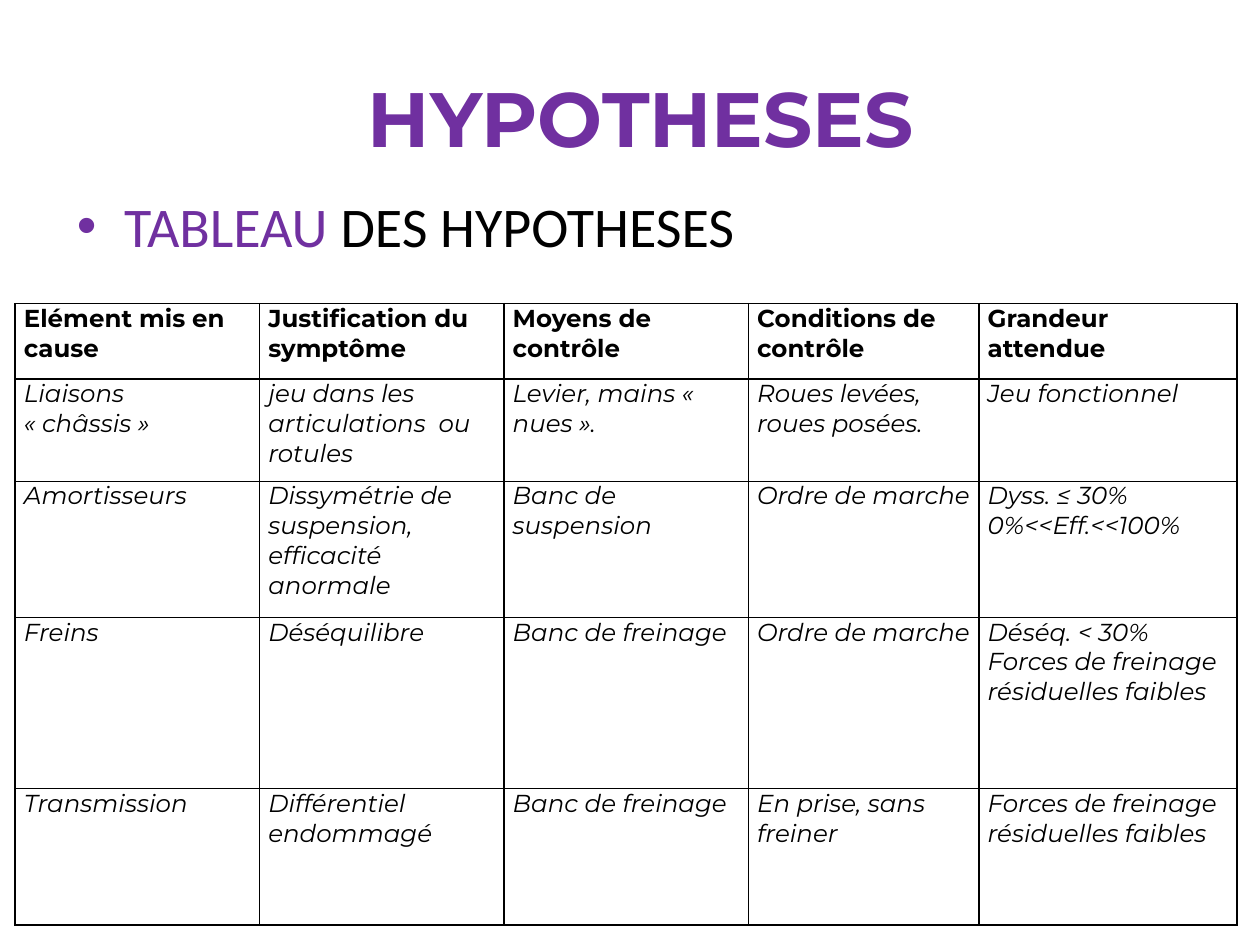
from lxml import etree
from pptx import Presentation
from pptx.dml.color import RGBColor
from pptx.enum.text import MSO_ANCHOR, PP_ALIGN
from pptx.oxml.ns import qn
from pptx.util import Inches, Pt

MIDDLE = MSO_ANCHOR.MIDDLE
CENTER = PP_ALIGN.CENTER

COLORS = {"accent": "7030A0", "ink": "000000"}
TITLE = " HYPOTHESES"
LEAD = [("TABLEAU", "accent"), (" DES HYPOTHESES", "ink")]
ROWS = [
    ["Elément mis en cause", "Justification du symptôme", "Moyens de contrôle",
     "Conditions de contrôle", "Grandeur attendue"],
    ["Liaisons\n« châssis »", "jeu dans les articulations  ou rotules",
     "Levier, mains « nues ».", "Roues levées, roues posées.", "Jeu fonctionnel"],
    ["Amortisseurs", "Dissymétrie de suspension, efficacité anormale",
     "Banc de suspension", "Ordre de marche", "Dyss. ≤ 30%\n0%<<Eff.<<100%"],
    ["Freins", "Déséquilibre", "Banc de freinage", "Ordre de marche",
     "Déséq. < 30%\nForces de freinage résiduelles faibles"],
    ["Transmission", "Différentiel endommagé", "Banc de freinage",
     "En prise, sans freiner", "Forces de freinage résiduelles faibles"],
]
WIDTHS = [1.94, 1.94, 1.94, 1.83, 2.05]
HEIGHTS = [0.6, 0.81, 1.08, 1.36, 1.08]


def place(shape, left, top, width, height):
    shape.left, shape.top = Inches(left), Inches(top)
    shape.width, shape.height = Inches(width), Inches(height)


def style(run, face, size, color, bold=False, italic=False):
    font = run.font
    font.name, font.size = face, Pt(size)
    font.bold, font.italic = bold, italic
    font.color.rgb = RGBColor.from_string(COLORS[color])


def border(cell):
    props = cell._tc.get_or_add_tcPr()
    for spot, side in enumerate(("lnL", "lnR", "lnT", "lnB")):
        line = etree.Element(qn("a:" + side), w=str(Pt(1)))
        fill = etree.SubElement(line, qn("a:solidFill"))
        etree.SubElement(fill, qn("a:srgbClr"), val=COLORS["ink"])
        props.insert(spot, line)


def fill_cell(cell, text, head):
    cell.margin_left = cell.margin_right = Inches(0.07)
    cell.margin_top = cell.margin_bottom = 0
    cell.fill.background()
    border(cell)
    cell.text_frame.text = text
    for para in cell.text_frame.paragraphs:
        for run in para.runs:
            style(run, "Montserrat", 14, "ink", bold=head, italic=not head)


def main():
    deck = Presentation()
    deck.slide_width, deck.slide_height = Inches(10), Inches(7.5)
    slide = deck.slides.add_slide(deck.slide_layouts[1])

    title = slide.shapes.title
    place(title, 0.5, 0.3, 9, 1.25)
    title.text_frame.text = TITLE
    title.text_frame.vertical_anchor = MIDDLE
    para = title.text_frame.paragraphs[0]
    para.alignment = CENTER
    style(para.runs[0], "Montserrat", 44, "accent", bold=True)

    body = slide.placeholders[1]
    place(body, 0.51, 1.47, 9, 4.95)
    para = body.text_frame.paragraphs[0]
    for text, color in LEAD:
        run = para.add_run()
        run.text = text
        style(run, "Calibri", 32, color)

    frame = slide.shapes.add_table(
        len(ROWS), len(WIDTHS), Inches(0.12), Inches(2.41),
        Inches(sum(WIDTHS)), Inches(sum(HEIGHTS)))
    table = frame.table
    table.first_row = table.horz_banding = False
    for col, width in zip(table.columns, WIDTHS):
        col.width = Inches(width)
    for row, height in zip(table.rows, HEIGHTS):
        row.height = Inches(height)
    for r, texts in enumerate(ROWS):
        for c, text in enumerate(texts):
            fill_cell(table.cell(r, c), text, r == 0)

    deck.save("out.pptx")


if __name__ == "__main__":
    main()
